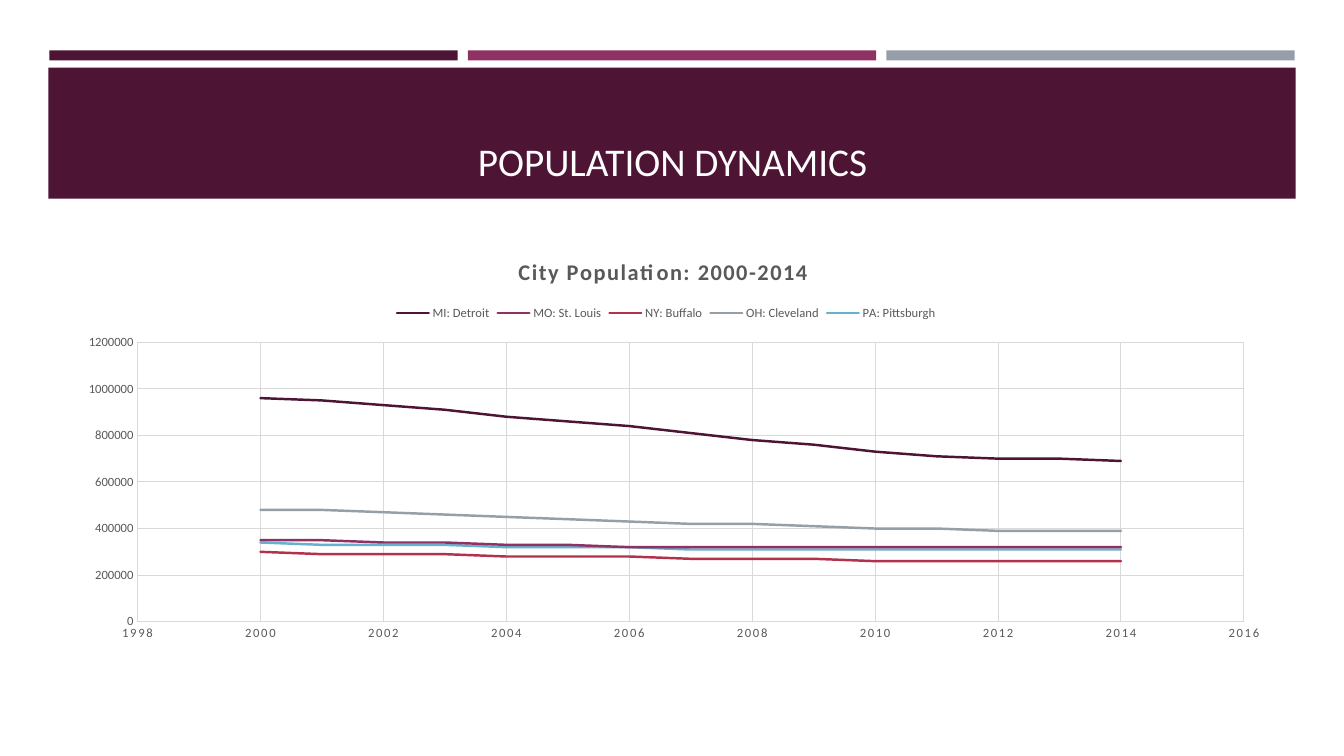
"""Build the population dynamics slide with a five-city line chart."""
from lxml import etree
from pptx import Presentation, util as u
from pptx.chart.data import XyChartData
from pptx.dml.color import RGBColor
from pptx.enum import chart as ch, shapes, text
from pptx.oxml.ns import qn

COLORS = {"plum": "4D1434", "magenta": "903163", "red": "B2324B", "gray": "969FA7",
          "blue": "66B1CE", "grid": "D9D9D9", "label": "595959", "white": "FFFEFF"}
FONT = "Calibri"


def write(tf, content, size, color, bold=False, spacing=0):
    p = tf.paragraphs[0]
    p.alignment = text.PP_ALIGN.CENTER
    r = p.add_run()
    r.text = content
    r.font.name, r.font.size, r.font.bold = FONT, u.Pt(size), bold
    r.font.color.rgb = RGBColor.from_string(COLORS[color])
    r.font._element.set("spc", str(spacing))


def place(parent, index, **settings):
    for old in parent.findall(qn("c:layout")):
        parent.remove(old)
    layout = etree.Element(qn("c:layout"))
    manual = etree.SubElement(layout, qn("c:manualLayout"))
    for tag, value in settings.items():
        etree.SubElement(manual, qn("c:" + tag)).set("val", str(value))
    parent.insert(index, layout)


prs = Presentation()
prs.slide_width, prs.slide_height = u.Inches(13.33), u.Inches(7.5)
s = prs.slides.add_slide(prs.slide_layouts[6])

bands = [(0.49 + 4.15 * i, 0.5, 4.05, 0.1, color)
         for i, color in enumerate(["plum", "magenta", "gray"])]
bands.append((0.48, 0.67, 12.37, 1.3, "plum"))
for left, top, width, height, color in bands:
    sp = s.shapes.add_shape(shapes.MSO_SHAPE.RECTANGLE, u.Inches(left), u.Inches(top),
                            u.Inches(width), u.Inches(height))
    sp.shadow.inherit = False
    sp.fill.solid()
    sp.fill.fore_color.rgb = RGBColor.from_string(COLORS[color])
    sp.line.fill.background()

title = s.shapes.add_textbox(u.Inches(0.64), u.Inches(0.77), u.Inches(12.06), u.Inches(1.11))
tf = title.text_frame
tf.word_wrap = True
tf.vertical_anchor = text.MSO_ANCHOR.BOTTOM
write(tf, "POPULATION DYNAMICS", size=28, color="white")

cities = [
    ("MI: Detroit", "plum", [96, 95, 93, 91, 88, 86, 84, 81, 78, 76, 73, 71, 70, 70, 69]),
    ("MO: St. Louis", "magenta", [35, 35, 34, 34, 33, 33] + [32] * 9),
    ("NY: Buffalo", "red", [30, 29, 29, 29, 28, 28, 28, 27, 27, 27, 26, 26, 26, 26, 26]),
    ("OH: Cleveland", "gray", [48, 48, 47, 46, 45, 44, 43, 42, 42, 41, 40, 40, 39, 39, 39]),
    ("PA: Pittsburgh", "blue", [34, 33, 33, 33, 32, 32, 32] + [31] * 8),
]
data = XyChartData()
for name, color, ten_thousands in cities:
    series = data.add_series(name)
    for year, value in enumerate(ten_thousands, start=2000):
        series.add_data_point(year, value * 10000)

chart = s.shapes.add_chart(ch.XL_CHART_TYPE.XY_SCATTER_LINES_NO_MARKERS, u.Inches(0.64),
                           u.Inches(2.39), u.Inches(12.06), u.Inches(4.02), data).chart
chart.font.name, chart.font.size = FONT, u.Pt(10)
chart.plots[0].vary_by_categories = False
for series, (name, color, ten_thousands) in zip(chart.plots[0].series, cities):
    series.smooth = False
    series.marker.style = ch.XL_MARKER_STYLE.NONE
    series.format.line.width = u.Pt(1.75)
    series.format.line.color.rgb = RGBColor.from_string(COLORS[color])
    series._element.find(qn("c:spPr")).find(qn("a:ln")).set("cap", "rnd")

chart.has_title = True
write(chart.chart_title.text_frame, "City Population: 2000-2014", size=16, color="label",
      bold=True, spacing=120)
chart.chart_title.include_in_layout = False
chart.has_legend = True
chart.legend.position = ch.XL_LEGEND_POSITION.TOP
chart.legend.include_in_layout = False

axes = [(chart.category_axis, 1998, 2016, 2), (chart.value_axis, 0, 1200000, 200000)]
for axis, low, high, step in axes:
    axis.minimum_scale, axis.maximum_scale, axis.major_unit = low, high, step
    axis.major_tick_mark = axis.minor_tick_mark = ch.XL_TICK_MARK.NONE
    axis.has_major_gridlines = True
    axis.tick_labels.number_format = "General"
    axis.tick_labels.number_format_is_linked = False
    for line in (axis.format.line, axis.major_gridlines.format.line):
        line.width = u.Pt(0.75)
        line.color.rgb = RGBColor.from_string(COLORS["grid"])
for font in (chart.legend.font, chart.category_axis.tick_labels.font,
             chart.value_axis.tick_labels.font):
    font.name, font.size = FONT, u.Pt(9)
    font.color.rgb = RGBColor.from_string(COLORS["label"])
chart.category_axis.tick_labels.font._element.set("spc", "120")

place(chart.chart_title._element, 1, xMode="edge", yMode="edge", x=0.37, y=0.03)
place(chart.legend._element, 1, xMode="edge", yMode="edge", x=0.27, y=0.15)
place(chart._chartSpace.chart.plotArea, 0, layoutTarget="inner", xMode="edge",
      yMode="edge", x=0.06, y=0.25, w=0.91, h=0.69)

prs.save("out.pptx")
